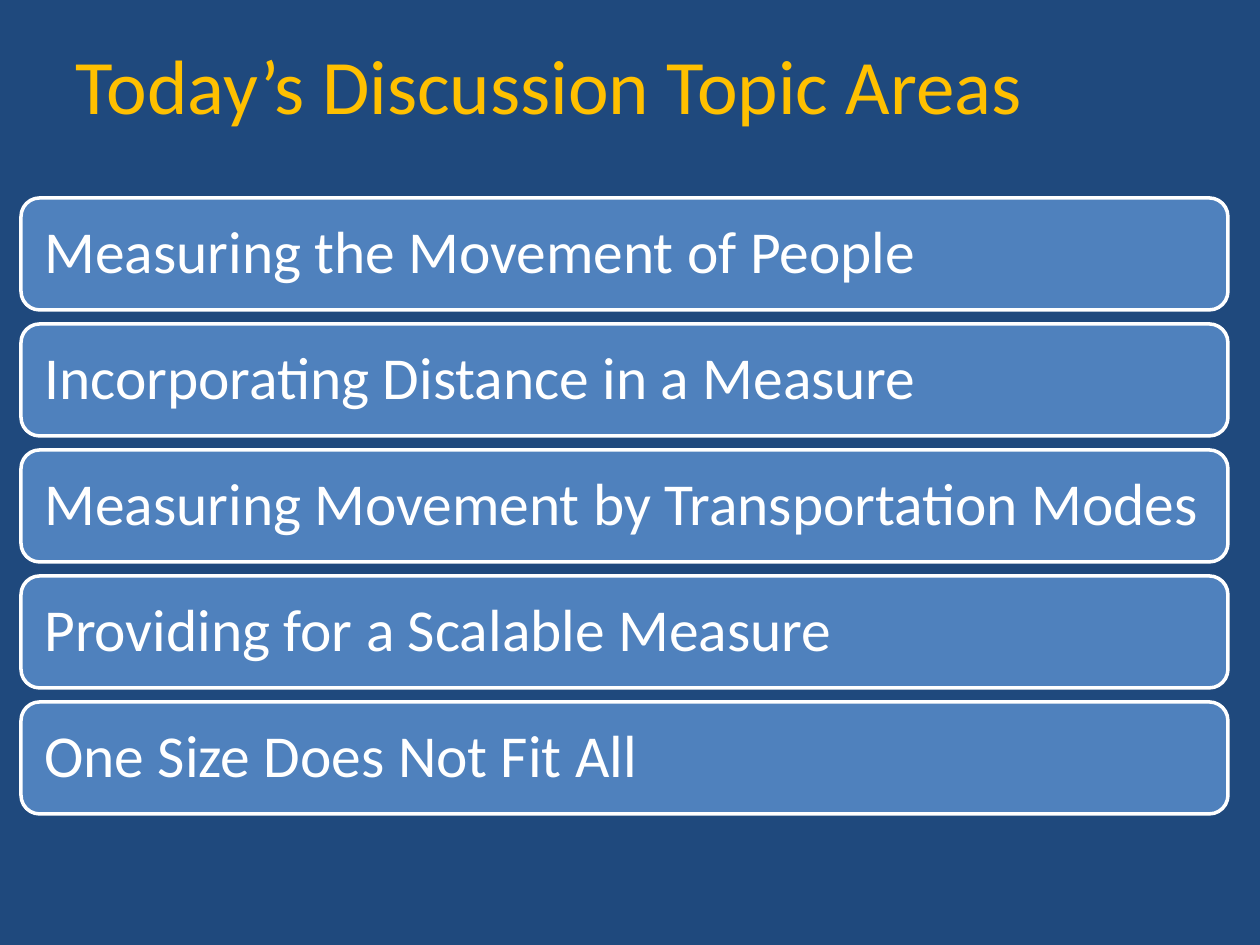
"""Build the discussion topics slide."""
import pptx
import pptx.dml.color
import pptx.enum.shapes
import pptx.enum.text
import pptx.util

TITLE = "Today’s Discussion Topic Areas"
TOPICS = [
    "Measuring the Movement of People",
    "Incorporating Distance in a Measure",
    "Measuring Movement by Transportation Modes",
    "Providing for a Scalable Measure",
    "One Size Does Not Fit All",
]

NAVY = pptx.dml.color.RGBColor(0x1F, 0x49, 0x7D)
BLUE = pptx.dml.color.RGBColor(0x4F, 0x81, 0xBD)
GOLD = pptx.dml.color.RGBColor(0xFF, 0xC0, 0x00)
WHITE = pptx.dml.color.RGBColor(0xFF, 0xFF, 0xFF)

PX = pptx.util.Inches(1) // 126
TITLE_BOX = (63, 21, 1134, 126)
BAR_LEFT, BAR_TOP, BAR_WIDTH, BAR_HEIGHT = 21, 198, 1207, 112
BAR_PITCH = 126


def to_emu(*lengths):
    return [length * PX for length in lengths]


def write_text(shape, text, size, color, inset, line_spacing=1.0):
    frame = shape.text_frame
    frame.word_wrap = True
    frame.vertical_anchor = pptx.enum.text.MSO_ANCHOR.MIDDLE
    frame.margin_left = frame.margin_right = inset * PX
    frame.margin_top = frame.margin_bottom = inset * PX
    paragraph = frame.paragraphs[0]
    paragraph.alignment = pptx.enum.text.PP_ALIGN.LEFT
    paragraph.line_spacing = line_spacing
    run = paragraph.add_run()
    run.text = text
    run.font.name = "Calibri"
    run.font.size = pptx.util.Pt(size)
    run.font.color.rgb = color


def add_topic_bar(slide, index, topic):
    top = BAR_TOP + index * BAR_PITCH
    bar = slide.shapes.add_shape(
        pptx.enum.shapes.MSO_SHAPE.ROUNDED_RECTANGLE,
        *to_emu(BAR_LEFT, top, BAR_WIDTH, BAR_HEIGHT),
    )
    bar.shadow.inherit = False
    bar.fill.solid()
    bar.fill.fore_color.rgb = BLUE
    bar.line.color.rgb = WHITE
    bar.line.width = pptx.util.Pt(2)
    write_text(bar, topic, size=34, color=WHITE, inset=18, line_spacing=0.9)


def main():
    presentation = pptx.Presentation()
    presentation.slide_width, presentation.slide_height = to_emu(1260, 945)
    slide = presentation.slides.add_slide(presentation.slide_layouts[6])
    slide.background.fill.solid()
    slide.background.fill.fore_color.rgb = NAVY

    title = slide.shapes.add_textbox(*to_emu(*TITLE_BOX))
    write_text(title, TITLE, size=44, color=GOLD, inset=13)
    for index, topic in enumerate(TOPICS):
        add_topic_bar(slide, index, topic)

    presentation.save("out.pptx")


if __name__ == "__main__":
    main()
